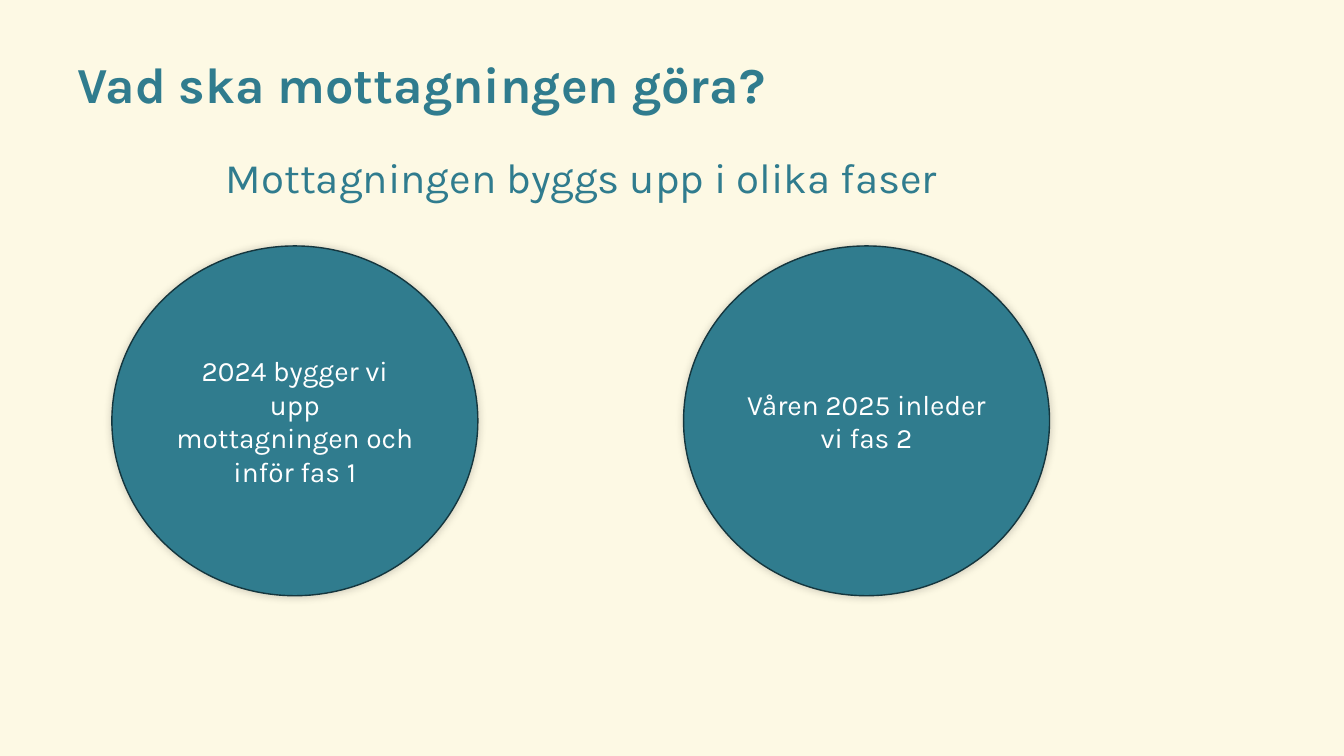
from dataclasses import dataclass

from lxml.etree import SubElement
from pptx import Presentation
from pptx.dml.color import RGBColor
from pptx.enum.shapes import MSO_SHAPE
from pptx.enum.text import MSO_ANCHOR, PP_ALIGN
from pptx.oxml.ns import qn
from pptx.shapes.autoshape import Shape
from pptx.slide import Slide
from pptx.util import Inches, Pt

CREAM = RGBColor(0xFD, 0xF9, 0xE4)
TEAL = RGBColor(0x30, 0x7C, 0x8E)
DARK_TEAL = RGBColor(0x15, 0x36, 0x3E)
WHITE = RGBColor(0xFF, 0xFF, 0xFF)
BLACK = RGBColor(0x00, 0x00, 0x00)

PHASE_LEFT = 1.11
PHASE_STEP = 5.67
PHASE_TOP = 2.44
PHASE_WIDTH = 3.63
PHASE_HEIGHT = 3.47


@dataclass(frozen=True)
class Heading:
    text: str
    left: float
    top: float
    width: float
    height: float
    size: float
    bold: bool
    align: PP_ALIGN
    anchor: MSO_ANCHOR


HEADINGS = [
    Heading("Vad ska mottagningen göra?", 0.67, 0.39, 12, 0.82,
            36, True, PP_ALIGN.LEFT, MSO_ANCHOR.MIDDLE),
    Heading("Mottagningen byggs upp i olika faser ", 0.67, 1.4, 10.3, 5.3,
            30, False, PP_ALIGN.CENTER, MSO_ANCHOR.TOP),
]
PHASES = [
    "2024 bygger vi upp mottagningen och inför fas 1",
    "Våren 2025 inleder vi fas 2",
]


def write_text(shape: Shape, text: str, size: float, color: RGBColor, bold: bool,
               align: PP_ALIGN, anchor: MSO_ANCHOR, line_spacing: float) -> None:
    frame = shape.text_frame
    frame.word_wrap = True
    frame.vertical_anchor = anchor
    paragraph = frame.paragraphs[0]
    paragraph.alignment = align
    paragraph.line_spacing = line_spacing
    run = paragraph.add_run()
    run.text = text
    font_format = {"name": "Karla", "size": Pt(size), "bold": bold}
    for attribute, value in font_format.items():
        setattr(run.font, attribute, value)
    run.font.color.rgb = color


def add_soft_shadow(shape: Shape) -> None:
    shape.shadow.inherit = False
    effects = shape._element.spPr.find(qn("a:effectLst"))
    shadow = SubElement(effects, qn("a:outerShdw"), blurRad=str(Pt(6)), dist="0",
                        dir=str(315 * 60000), algn="ctr", rotWithShape="0")
    color = SubElement(shadow, qn("a:srgbClr"), val=str(BLACK))
    SubElement(color, qn("a:alpha"), val="20000")


def add_heading(slide: Slide, heading: Heading) -> None:
    box = slide.shapes.add_textbox(Inches(heading.left), Inches(heading.top),
                                   Inches(heading.width), Inches(heading.height))
    write_text(box, heading.text, heading.size, TEAL, heading.bold,
               heading.align, heading.anchor, 1.1)


def add_phase(slide: Slide, index: int, text: str) -> None:
    circle = slide.shapes.add_shape(
        MSO_SHAPE.OVAL, Inches(PHASE_LEFT + index * PHASE_STEP), Inches(PHASE_TOP),
        Inches(PHASE_WIDTH), Inches(PHASE_HEIGHT))
    circle.fill.solid()
    circle.fill.fore_color.rgb = TEAL
    circle.line.color.rgb = DARK_TEAL
    circle.line.width = Pt(1)
    add_soft_shadow(circle)
    write_text(circle, text, 20, WHITE, False,
               PP_ALIGN.CENTER, MSO_ANCHOR.MIDDLE, 1.0)


def main() -> None:
    presentation = Presentation()
    presentation.slide_width = Inches(13.33)
    presentation.slide_height = Inches(7.5)
    slide = presentation.slides.add_slide(presentation.slide_layouts[6])
    slide.background.fill.solid()
    slide.background.fill.fore_color.rgb = CREAM
    for heading in HEADINGS:
        add_heading(slide, heading)
    for index, text in enumerate(PHASES):
        add_phase(slide, index, text)
    presentation.save("out.pptx")


if __name__ == "__main__":
    main()
